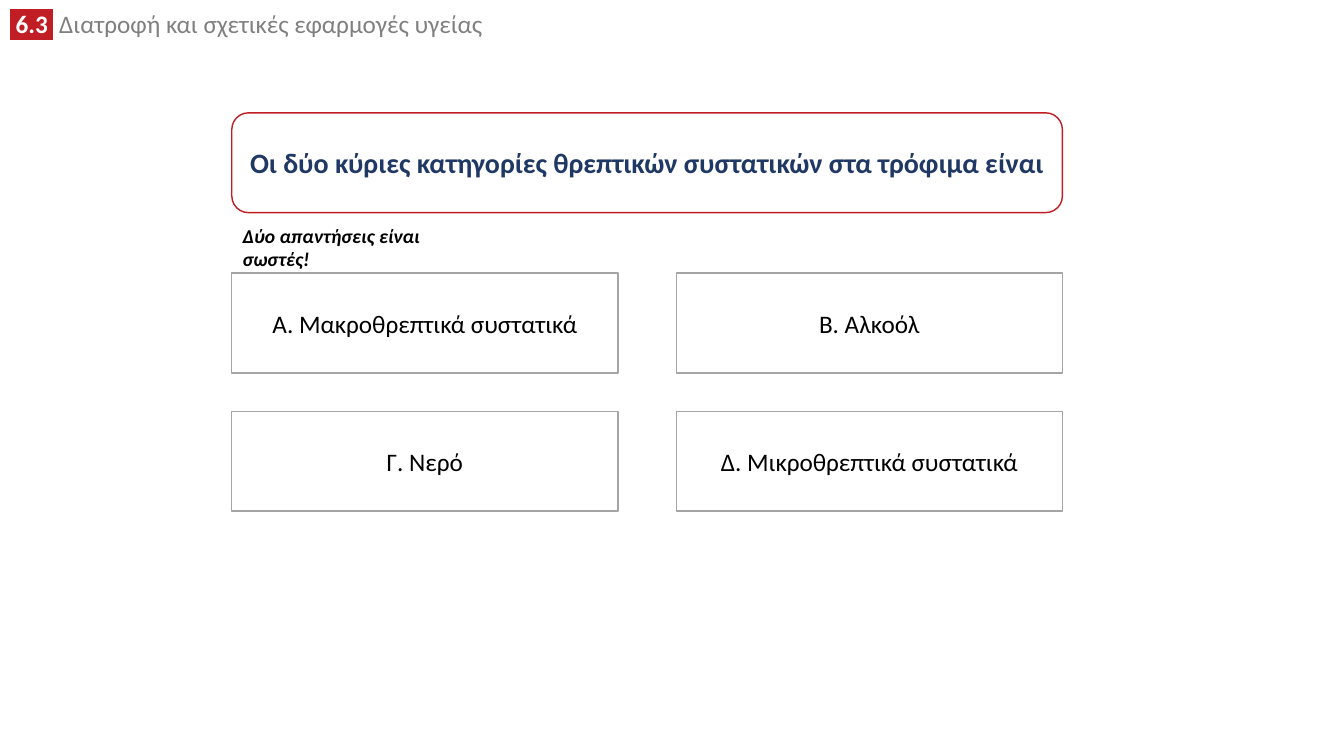
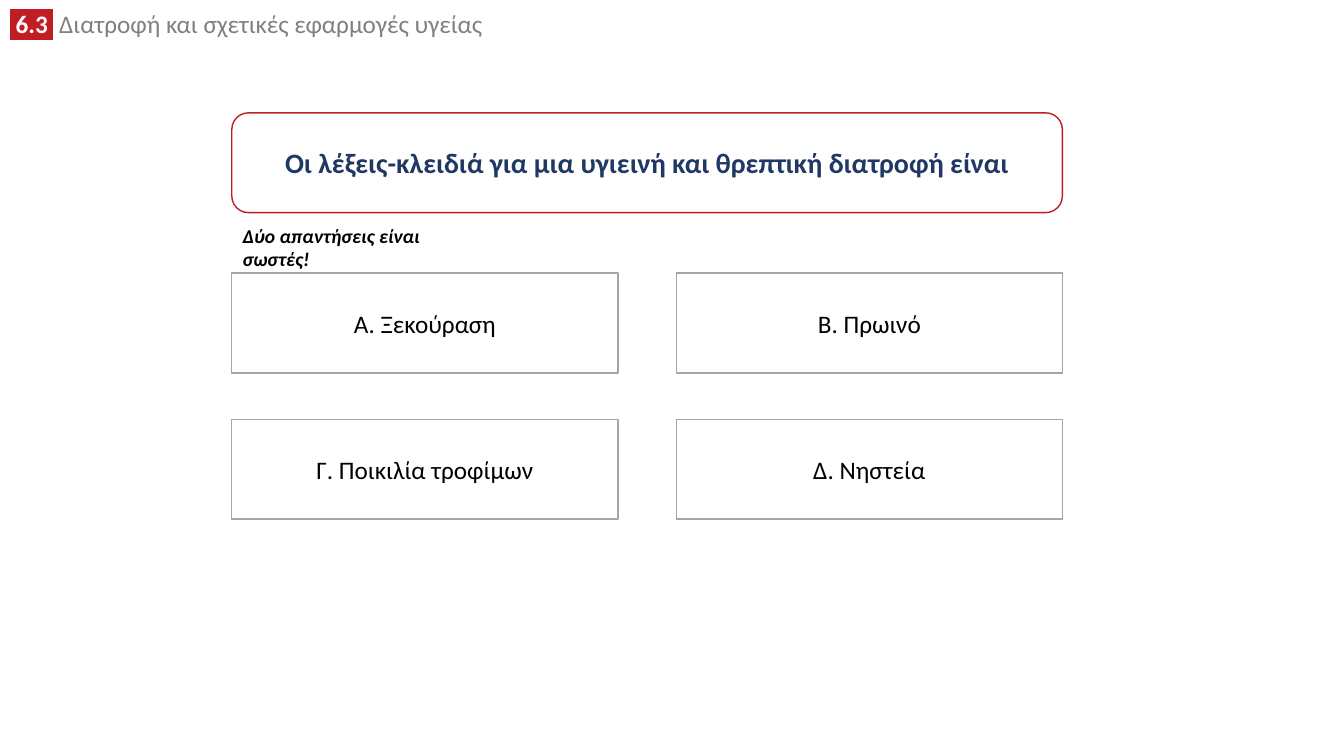
from dataclasses import dataclass

import lxml.etree
import pptx
import pptx.dml.color
import pptx.enum.shapes
import pptx.enum.text
import pptx.oxml.ns
import pptx.presentation
import pptx.shapes.autoshape
import pptx.slide
import pptx.text.text
import pptx.util

Pt = pptx.util.Pt
RGB = pptx.dml.color.RGBColor
Preset = pptx.enum.shapes.MSO_SHAPE


@dataclass(frozen=True)
class Theme:
    font: str = "Calibri"
    red: str = "C01E24"
    navy: str = "203864"
    grey: str = "808080"
    border: str = "A5A5A5"
    black: str = "000000"
    white: str = "FFFFFF"
    question_size: int = 20
    body_size: int = 18
    hint_size: int = 14


@dataclass(frozen=True)
class Box:
    left: float
    top: float
    width: float
    height: float


@dataclass(frozen=True)
class Quiz:
    question: str
    answers: tuple[str, ...]
    second_row_top: float


THEME = Theme()

SECTION_NUMBER = " 6.3 "
SECTION_TITLE = " Διατροφή και σχετικές εφαρμογές υγείας"
HINT = "Δύο απαντήσεις είναι σωστές!"

# Shared layout, in points
HEADER = Box(0, 6.5, 685.4, 25.2)
QUESTION = Box(165.6, 80.6, 593.3, 71.3)
HINT_BOX = Box(166.3, 156.2, 161.3, 24.5)
ANSWER_WIDTH = 275.8
FIRST_ROW_TOP = 195.1

QUIZZES = (
    Quiz(
        "Οι δύο κύριες κατηγορίες θρεπτικών συστατικών στα τρόφιμα είναι",
        ("A. Μακροθρεπτικά συστατικά", "B. Αλκοόλ",
         "Γ. Νερό", "Δ. Μικροθρεπτικά συστατικά"),
        293.8,
    ),
    Quiz(
        "Οι λέξεις-κλειδιά για μια υγιεινή και θρεπτική διατροφή είναι",
        ("A. Ξεκούραση", "B. Πρωινό", "Γ. Ποικιλία τροφίμων", "Δ. Νηστεία"),
        299.5,
    ),
)


def style_font(font: pptx.text.text.Font, size: float, color: str,
               bold: bool = False, italic: bool = False) -> None:
    font.name = THEME.font
    font.size = Pt(size)
    font.bold = bold
    font.italic = italic
    font.color.rgb = RGB.from_string(color)


def highlight(run: pptx.text.text._Run, color: str) -> None:
    """Put a highlight right after the run's fill, where the schema wants it."""
    qn = pptx.oxml.ns.qn
    mark = lxml.etree.Element(qn("a:highlight"))
    lxml.etree.SubElement(mark, qn("a:srgbClr")).set("val", color)
    run.font._element.find(qn("a:solidFill")).addnext(mark)


def add_text_area(slide: pptx.slide.Slide, box: Box) -> pptx.text.text._Paragraph:
    area = slide.shapes.add_textbox(
        Pt(box.left), Pt(box.top), Pt(box.width), Pt(box.height))
    area.text_frame.word_wrap = True
    return area.text_frame.paragraphs[0]


def add_header(slide: pptx.slide.Slide) -> None:
    heading = add_text_area(slide, HEADER)
    heading.line_spacing = 0.8
    number = heading.add_run()
    number.text = SECTION_NUMBER
    style_font(number.font, THEME.body_size, THEME.white, bold=True)
    highlight(number, THEME.red)
    title = heading.add_run()
    title.text = SECTION_TITLE
    style_font(title.font, THEME.body_size, THEME.grey)


def add_card(slide: pptx.slide.Slide, preset: Preset, box: Box, text: str,
             border: str, size: float, color: str, bold: bool = False) -> None:
    card = slide.shapes.add_shape(
        preset, Pt(box.left), Pt(box.top), Pt(box.width), Pt(box.height))
    card.shadow.inherit = False
    card.fill.solid()
    card.fill.fore_color.rgb = RGB.from_string(THEME.white)
    card.line.color.rgb = RGB.from_string(border)
    card.line.width = Pt(1)
    card.text_frame.word_wrap = True
    card.text_frame.vertical_anchor = pptx.enum.text.MSO_ANCHOR.MIDDLE
    label = card.text_frame.paragraphs[0]
    label.text = text
    label.alignment = pptx.enum.text.PP_ALIGN.CENTER
    style_font(label.font, size, color, bold)


def add_quiz(deck: pptx.presentation.Presentation, quiz: Quiz) -> None:
    slide = deck.slides.add_slide(deck.slide_layouts[6])
    add_header(slide)

    # Question
    add_card(slide, Preset.ROUNDED_RECTANGLE, QUESTION, quiz.question,
             THEME.red, THEME.question_size, THEME.navy, bold=True)

    # Answers in two columns, flush with both edges of the question
    columns = (QUESTION.left, QUESTION.left + QUESTION.width - ANSWER_WIDTH)
    rows = (FIRST_ROW_TOP, quiz.second_row_top)
    for index, answer in enumerate(quiz.answers):
        row, column = divmod(index, len(columns))
        box = Box(columns[column], rows[row], ANSWER_WIDTH, QUESTION.height)
        add_card(slide, Preset.RECTANGLE, box, answer,
                 THEME.border, THEME.body_size, THEME.black)

    # Hint
    hint = add_text_area(slide, HINT_BOX)
    hint.text = HINT
    style_font(hint.font, THEME.hint_size, THEME.black, bold=True, italic=True)


def main() -> None:
    deck = pptx.Presentation()
    deck.slide_width, deck.slide_height = Pt(960), Pt(540)
    for quiz in QUIZZES:
        add_quiz(deck, quiz)
    deck.save("out.pptx")


if __name__ == "__main__":
    main()
